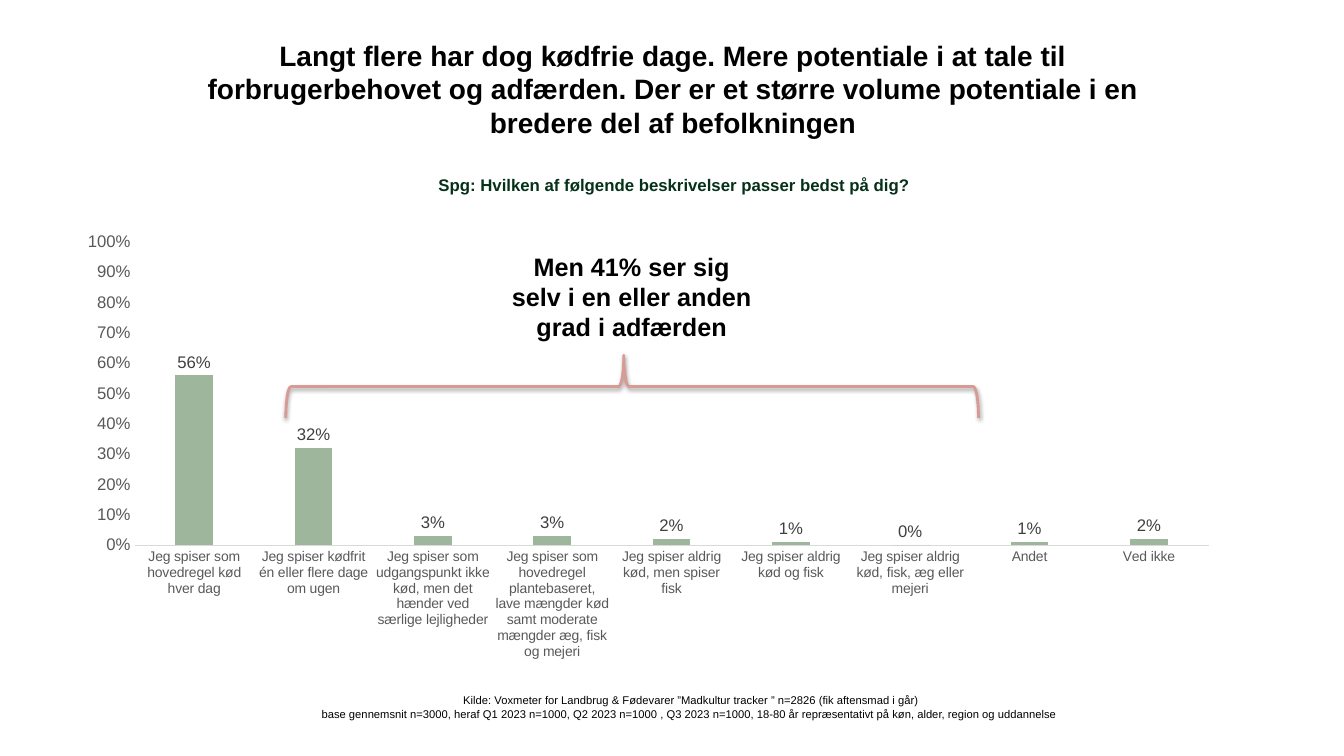
from dataclasses import dataclass

from lxml import etree
from pptx import Presentation
from pptx import util as u
from pptx.chart.data import CategoryChartData
from pptx.dml.color import RGBColor
from pptx.enum import chart as chart_enum
from pptx.enum import shapes, text
from pptx.oxml import parse_xml
from pptx.oxml.ns import nsdecls, qn


@dataclass(frozen=True)
class Theme:
    font: str = "Arial"
    black: str = "000000"
    green: str = "053119"
    bar: str = "9EB79C"
    brace: str = "D79B93"
    axis_text: str = "595959"
    axis_line: str = "D9D9D9"
    value_text: str = "404040"
    title_size: int = 20
    callout_size: int = 18
    body_size: int = 12
    category_size: int = 10
    source_size: int = 8


THEME = Theme()


@dataclass(frozen=True)
class Box:
    left: float
    top: float
    width: float
    height: float

    def lengths(self) -> tuple:
        return tuple(u.Inches(x) for x in (self.left, self.top, self.width, self.height))


@dataclass(frozen=True)
class Label:
    wording: str
    box: Box
    size: int
    color: str = THEME.black
    bold: bool = True
    insets: tuple[float, float] = (0, 0)


LABELS = [
    Label("Langt flere har dog kødfrie dage. Mere potentiale i at tale til "
          "forbrugerbehovet og adfærden. Der er et større volume potentiale i en "
          "bredere del af befolkningen",
          Box(1.48, 0.33, 10.39, 1.11), THEME.title_size, insets=(0.1, 0.05)),
    Label("Spg: Hvilken af følgende beskrivelser passer bedst på dig? ",
          Box(1.3, 1.73, 10.82, 0.4), THEME.body_size, THEME.green),
    Label("Men 41% ser sig selv i en eller anden grad i adfærden",
          Box(5.04, 2.49, 2.45, 0.91), THEME.callout_size),
    Label("Kilde: Voxmeter for Landbrug & Fødevarer ”Madkultur tracker ” n=2826 "
          "(fik aftensmad i går)\n"
          "base gennemsnit n=3000, heraf Q1 2023 n=1000, Q2 2023 n=1000 , Q3 2023 n=1000, "
          "18-80 år repræsentativt på køn, alder, region og uddannelse ",
          Box(2.8, 6.88, 8.11, 0.27), THEME.source_size, bold=False),
]

ANSWERS = {
    "Jeg spiser som hovedregel kød hver dag": 0.56,
    "Jeg spiser kødfrit én eller flere dage om ugen": 0.32,
    "Jeg spiser som udgangspunkt ikke kød, men det hænder ved særlige lejligheder": 0.03,
    "Jeg spiser som hovedregel plantebaseret, lave mængder kød samt moderate "
    "mængder æg, fisk og mejeri": 0.03,
    "Jeg spiser aldrig kød, men spiser fisk": 0.02,
    "Jeg spiser aldrig kød og fisk": 0.01,
    "Jeg spiser aldrig kød, fisk, æg eller mejeri": 0,
    "Andet": 0.01,
    "Ved ikke": 0.02,
}

CHART_BOX = Box(0.87, 2.25, 11.24, 4.48)
PLOT_BOX = Box(0.037, 0.033, 0.952, 0.672)  # fractions of the chart
BRACE_BOX = Box(5.96, 0.4, 0.62, 6.87)  # before rotation


def style_font(font, size: int, color: str, bold: bool = False) -> None:
    font.name = THEME.font
    font.size = u.Pt(size)
    font.bold = bold
    font.color.rgb = RGBColor.from_string(color)


def add_label(slide, label: Label) -> None:
    frame = slide.shapes.add_textbox(*label.box.lengths()).text_frame
    frame.word_wrap = True
    frame.auto_size = text.MSO_AUTO_SIZE.SHAPE_TO_FIT_TEXT
    side, end = (u.Inches(inset) for inset in label.insets)
    frame.margin_left = frame.margin_right = side
    frame.margin_top = frame.margin_bottom = end
    paragraph = frame.paragraphs[0]
    paragraph.text = label.wording
    paragraph.alignment = text.PP_ALIGN.CENTER
    for run in paragraph.runs:
        style_font(run.font, label.size, label.color, label.bold)


def place_plot(chart, box: Box) -> None:
    """Fix the inner plot area at the given fractions of the chart."""
    plot_area = chart.plots[0]._element.getparent()
    for layout in plot_area.findall(qn("c:layout")):
        plot_area.remove(layout)
    layout = parse_xml(f"<c:layout {nsdecls('c')}><c:manualLayout/></c:layout>")
    settings = {"layoutTarget": "inner", "xMode": "edge", "yMode": "edge",
                "x": box.left, "y": box.top, "w": box.width, "h": box.height}
    for name, value in settings.items():
        etree.SubElement(layout[0], qn(f"c:{name}")).set("val", str(value))
    plot_area.insert(0, layout)


def add_answer_chart(slide) -> None:
    data = CategoryChartData(number_format="0%")
    data.categories = ANSWERS.keys()
    data.add_series("Series 1", ANSWERS.values())
    chart = slide.shapes.add_chart(
        chart_enum.XL_CHART_TYPE.COLUMN_CLUSTERED, *CHART_BOX.lengths(), data).chart
    chart.has_legend = False
    chart.has_title = False
    style_font(chart.font, THEME.category_size, THEME.black)
    place_plot(chart, PLOT_BOX)

    for axis, size in ((chart.category_axis, THEME.category_size),
                       (chart.value_axis, THEME.body_size)):
        axis.has_major_gridlines = False
        axis.major_tick_mark = axis.minor_tick_mark = chart_enum.XL_TICK_MARK.NONE
        style_font(axis.tick_labels.font, size, THEME.axis_text)
    category_line = chart.category_axis.format.line
    category_line.color.rgb = RGBColor.from_string(THEME.axis_line)
    category_line.width = u.Pt(0.75)
    values = chart.value_axis
    values.minimum_scale, values.maximum_scale, values.major_unit = 0, 1, 0.1
    values.format.line.fill.background()
    values.tick_labels.number_format = "0%"
    values.tick_labels.number_format_is_linked = False

    plot = chart.plots[0]
    plot.vary_by_categories = False
    plot.gap_width, plot.overlap = 219, -27
    fill = plot.series[0].format.fill
    fill.solid()
    fill.fore_color.rgb = RGBColor.from_string(THEME.bar)
    plot.has_data_labels = True
    labels = plot.data_labels
    labels.show_value = True
    labels.number_format = "0%"
    labels.number_format_is_linked = False
    labels.position = chart_enum.XL_LABEL_POSITION.OUTSIDE_END
    style_font(labels.font, THEME.body_size, THEME.value_text)


def add_brace(slide) -> None:
    brace = slide.shapes.add_shape(shapes.MSO_SHAPE.RIGHT_BRACE, *BRACE_BOX.lengths())
    brace.rotation = 270
    brace.adjustments[0], brace.adjustments[1] = 0.083, 0.488
    brace.fill.background()
    brace.line.color.rgb = RGBColor.from_string(THEME.brace)
    brace.line.width = u.Pt(2)
    brace.shadow.inherit = False
    effects = brace._element.spPr.find(qn("a:effectLst"))
    effects.append(parse_xml(
        f'<a:outerShdw {nsdecls("a")} blurRad="{u.Pt(3.1)}" dist="{u.Pt(1.6)}" '
        f'dir="5400000" rotWithShape="0"><a:srgbClr val="{THEME.black}">'
        '<a:alpha val="38000"/></a:srgbClr></a:outerShdw>'))


def main() -> None:
    presentation = Presentation()
    presentation.slide_width = u.Inches(13.33)
    presentation.slide_height = u.Inches(7.5)
    slide = presentation.slides.add_slide(presentation.slide_layouts[6])
    add_answer_chart(slide)
    add_brace(slide)
    for label in LABELS:
        add_label(slide, label)
    presentation.save("out.pptx")


if __name__ == "__main__":
    main()
